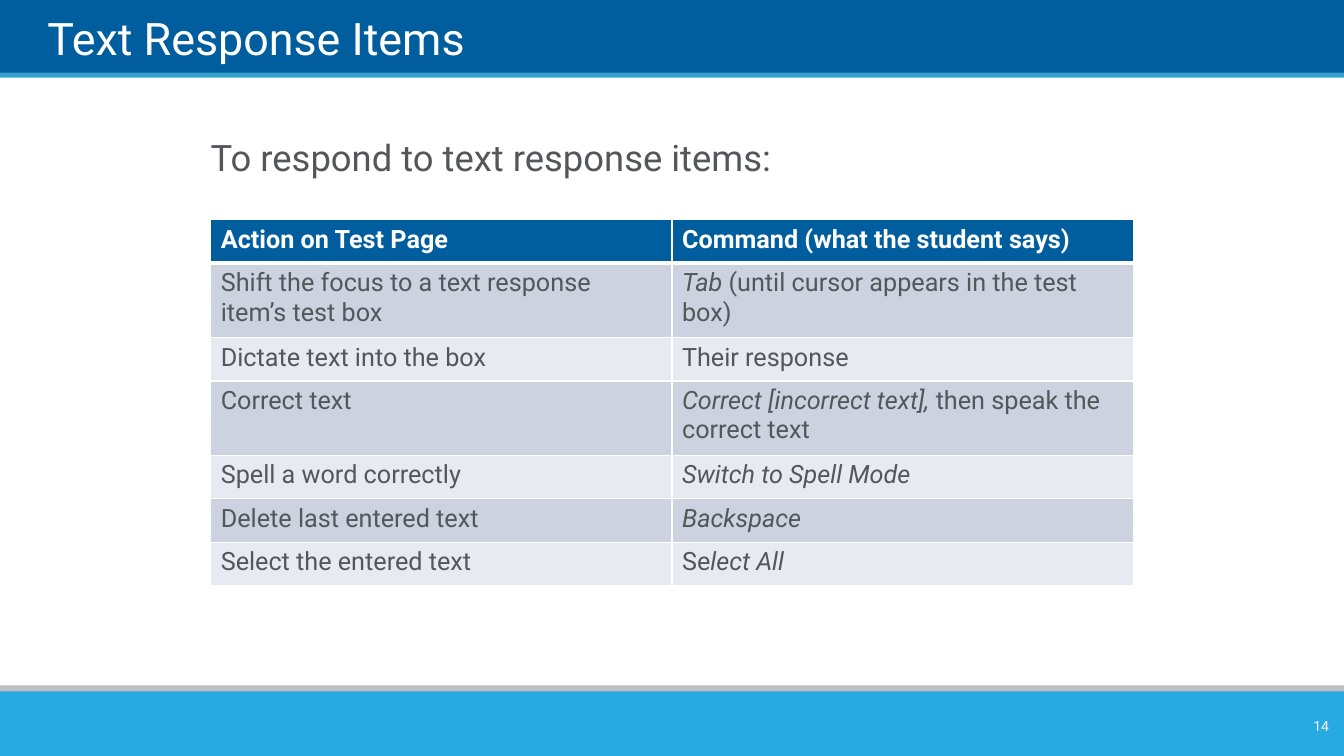
from lxml import etree
from pptx import Presentation, util as u
from pptx.dml.color import RGBColor
from pptx.enum import shapes, text
from pptx.oxml import ns

COLORS = {"navy": "005E9E", "blue": "35A0CE", "sky": "27AAE1", "silver": "BFBFBF",
          "white": "FFFFFF", "ink": "53565A", "odd": "CCD2DF", "even": "E7EAF0"}
WIDTH, HEIGHT = 13.33, 7.5
LEFT = 2.09

deck = Presentation()
deck.slide_width, deck.slide_height = u.Inches(WIDTH), u.Inches(HEIGHT)
page = deck.slides.add_slide(deck.slide_layouts[6])


def add_span(para, words, size, color, **formats):
    span = para.add_run()
    span.text = words
    span.font.color.rgb = RGBColor.from_string(COLORS[color])
    for name, value in {"name": "Roboto", "size": u.Pt(size), **formats}.items():
        setattr(span.font, name, value)


# Header and footer bands: top, height, colour
for top, height, color in [(-0.01, 0.75, "navy"), (0.72, 0.05, "blue"),
                           (6.8, 0.14, "silver"), (6.86, 0.64, "sky")]:
    band = page.shapes.add_shape(shapes.MSO_SHAPE.RECTANGLE, 0, u.Inches(top),
                                 u.Inches(WIDTH), u.Inches(height))
    band.shadow.inherit = False
    band.fill.solid()
    band.fill.fore_color.rgb = RGBColor.from_string(COLORS[color])
    band.line.fill.background()

# Title, lead-in and page number
ANCHOR, ALIGN = text.MSO_ANCHOR, text.PP_ALIGN
for words, place, size, color, anchor, align, spacing, inset in [
    ("Text Response Items", (0.47, 0.07, 12.05, 0.57), 32, "white",
     ANCHOR.BOTTOM, ALIGN.LEFT, 1.0, 0),
    ("To respond to text response items:", (LEFT, 1.28, 7.53, 0.53), 26, "ink",
     ANCHOR.TOP, ALIGN.LEFT, 1.15, 0),
    ("14", (12.51, 7.05, 0.77, 0.3), 10, "white",
     ANCHOR.MIDDLE, ALIGN.RIGHT, 1.0, 0.1),
]:
    box = page.shapes.add_textbox(*map(u.Inches, place))
    frame = box.text_frame
    formats = {"word_wrap": True, "vertical_anchor": anchor,
               "margin_left": u.Inches(inset), "margin_right": u.Inches(inset),
               "margin_top": u.Inches(inset / 2), "margin_bottom": u.Inches(inset / 2)}
    for name, value in formats.items():
        setattr(frame, name, value)
    para = frame.paragraphs[0]
    para.alignment, para.line_spacing = align, spacing
    add_span(para, words, size, color)

# Command table: each cell is a list of (words, italic)
rows = [
    ([("Action on Test Page", False)], [("Command (what the student says)", False)]),
    ([("Shift the focus to a text response item’s test box", False)],
     [("Tab", True), (" (until cursor appears in the test box)", False)]),
    ([("Dictate text into the box", False)], [("Their response", False)]),
    ([("Correct text", False)],
     [("Correct [incorrect text], ", True), ("then speak the correct text", False)]),
    ([("Spell a word correctly", False)], [("Switch to Spell Mode", True)]),
    ([("Delete last entered text", False)], [("Backspace", True)]),
    ([("Select the entered text", False)], [("Se", False), ("lect All", True)]),
]
ONE_LINE, TWO_LINES = 0.43, 0.74
heights = [TWO_LINES if row in (1, 3) else ONE_LINE for row in range(len(rows))]
table = page.shapes.add_table(len(rows), 2, u.Inches(LEFT), u.Inches(2.18),
                              u.Inches(9.15), u.Inches(sum(heights))).table
for column in table.columns:
    column.width = u.Inches(9.15 / 2)

for row, (cells, height) in enumerate(zip(rows, heights)):
    table.rows[row].height = u.Inches(height)
    header = row == 0
    fill = "navy" if header else "odd" if row % 2 else "even"
    for column, spans in enumerate(cells):
        cell = table.cell(row, column)
        for words, italic in spans:
            add_span(cell.text_frame.paragraphs[0], words, 18,
                     "white" if header else "ink", bold=header, italic=italic)

        # White borders, heavier around the header's lower edge; they precede the fill
        props = cell._tc.get_or_add_tcPr()
        for side in ("lnL", "lnR", "lnT", "lnB"):
            heavy = (row, side) in ((0, "lnB"), (1, "lnT"))
            line = etree.SubElement(props, ns.qn(f"a:{side}"), w=str(u.Pt(3 if heavy else 1)))
            solid = etree.SubElement(line, ns.qn("a:solidFill"))
            etree.SubElement(solid, ns.qn("a:srgbClr"), val=COLORS["white"])
        cell.fill.solid()
        cell.fill.fore_color.rgb = RGBColor.from_string(COLORS[fill])

deck.save("out.pptx")
